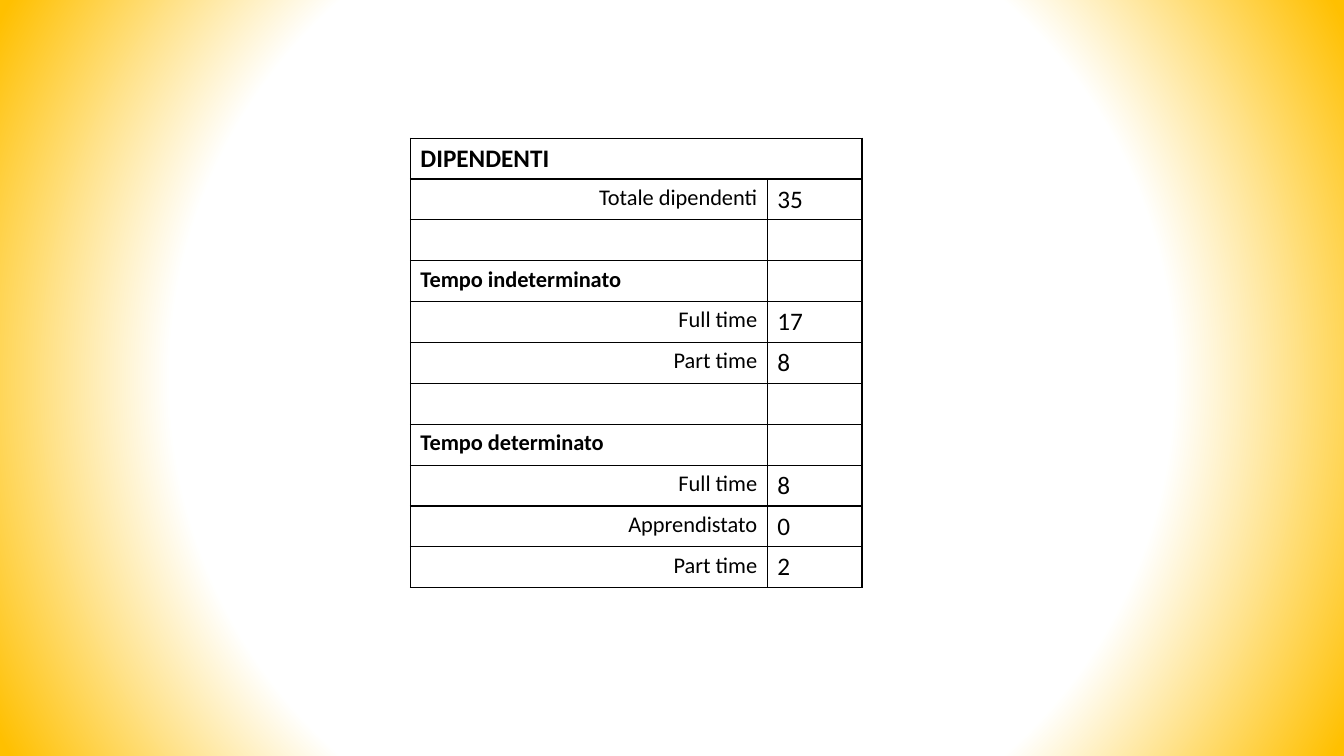
import dataclasses
import typing

import lxml.etree
import pptx
import pptx.dml.color
import pptx.enum.text
import pptx.oxml
import pptx.oxml.ns
import pptx.util

ALIGN = pptx.enum.text.PP_ALIGN
INCH = pptx.util.Inches


@dataclasses.dataclass(frozen=True)
class Theme:
    font: str = "Calibri"
    ink: str = "000000"
    glow: tuple = ((0, "FFFFFF"), (65, "FFFFFF"), (99, "FFC000"))
    title_size: int = 18
    label_size: int = 16
    count_size: int = 18
    rule_width: float = 1


@dataclasses.dataclass(frozen=True)
class StaffRow:
    label: str = ""
    count: str = ""
    heading: bool = False


THEME = Theme()
SLIDE_WIDTH, SLIDE_HEIGHT = 13.33, 7.5
TABLE_LEFT, TABLE_TOP = 4.07, 1.37
COLUMN_WIDTHS = (3.54, 0.94)
ROW_HEIGHT = 0.4

TITLE = "DIPENDENTI"
STAFF = (
    StaffRow("Totale dipendenti", "35"),
    StaffRow(),
    StaffRow("Tempo indeterminato", heading=True),
    StaffRow("Full time", "17"),
    StaffRow("Part time", "8"),
    StaffRow(),
    StaffRow("Tempo determinato", heading=True),
    StaffRow("Full time", "8"),
    StaffRow("Apprendistato", "0"),
    StaffRow("Part time", "2"),
)


def add_xml(parent: typing.Any, tag: str, **attributes: str) -> typing.Any:
    return lxml.etree.SubElement(parent, pptx.oxml.ns.qn(tag), attributes)


def paint_background(slide: typing.Any) -> None:
    """Radial glow, white in the middle."""
    slide.background.fill.gradient()
    gradient = slide.background._cSld.find(".//" + pptx.oxml.ns.qn("a:gradFill"))
    for child in list(gradient):
        gradient.remove(child)
    stops = add_xml(gradient, "a:gsLst")
    for percent, colour in THEME.glow:
        stop = add_xml(stops, "a:gs", pos=str(percent * 1000))
        add_xml(stop, "a:srgbClr", val=colour)
    circle = add_xml(gradient, "a:path", path="circle")
    add_xml(circle, "a:fillToRect", l="50000", t="50000", r="50000", b="50000")


def rule_cell(cell: typing.Any) -> None:
    """Clear fill and a thin rule on every side."""
    properties = cell._tc.get_or_add_tcPr()
    for side in ("a:lnL", "a:lnR", "a:lnT", "a:lnB"):
        line = add_xml(properties, side, w=str(pptx.util.Pt(THEME.rule_width)))
        add_xml(add_xml(line, "a:solidFill"), "a:srgbClr", val=THEME.ink)
    cell.fill.background()


def write(cell: typing.Any, text: str, *, size: int, bold: bool = False,
          align: typing.Any = ALIGN.LEFT) -> None:
    paragraph = cell.text_frame.paragraphs[0]
    paragraph.alignment = align
    if not text:
        return
    run = paragraph.add_run()
    run.text = text
    run.font.name = THEME.font
    run.font.size = pptx.util.Pt(size)
    run.font.bold = bold
    run.font.color.rgb = pptx.dml.color.RGBColor.from_string(THEME.ink)


def add_staff_table(slide: typing.Any) -> None:
    row_count = len(STAFF) + 1
    frame = slide.shapes.add_table(
        row_count, len(COLUMN_WIDTHS), INCH(TABLE_LEFT), INCH(TABLE_TOP),
        INCH(sum(COLUMN_WIDTHS)), INCH(row_count * ROW_HEIGHT))
    staff = frame.table
    staff.first_row = staff.horz_banding = False
    for column, width in zip(staff.columns, COLUMN_WIDTHS):
        column.width = INCH(width)
    for row in staff.rows:
        row.height = INCH(ROW_HEIGHT)
        for cell in row.cells:
            rule_cell(cell)

    # Title across both columns
    staff.cell(0, 0).merge(staff.cell(0, 1))
    write(staff.cell(0, 0), TITLE, size=THEME.title_size, bold=True)

    # Labels and counts
    for number, entry in enumerate(STAFF, start=1):
        write(staff.cell(number, 0), entry.label, size=THEME.label_size,
              bold=entry.heading,
              align=ALIGN.RIGHT if entry.count else ALIGN.LEFT)
        write(staff.cell(number, 1), entry.count, size=THEME.count_size)


def main() -> None:
    deck = pptx.Presentation()
    deck.slide_width = INCH(SLIDE_WIDTH)
    deck.slide_height = INCH(SLIDE_HEIGHT)
    slide = deck.slides.add_slide(deck.slide_layouts[6])
    paint_background(slide)
    add_staff_table(slide)
    deck.save("out.pptx")


if __name__ == "__main__":
    main()
